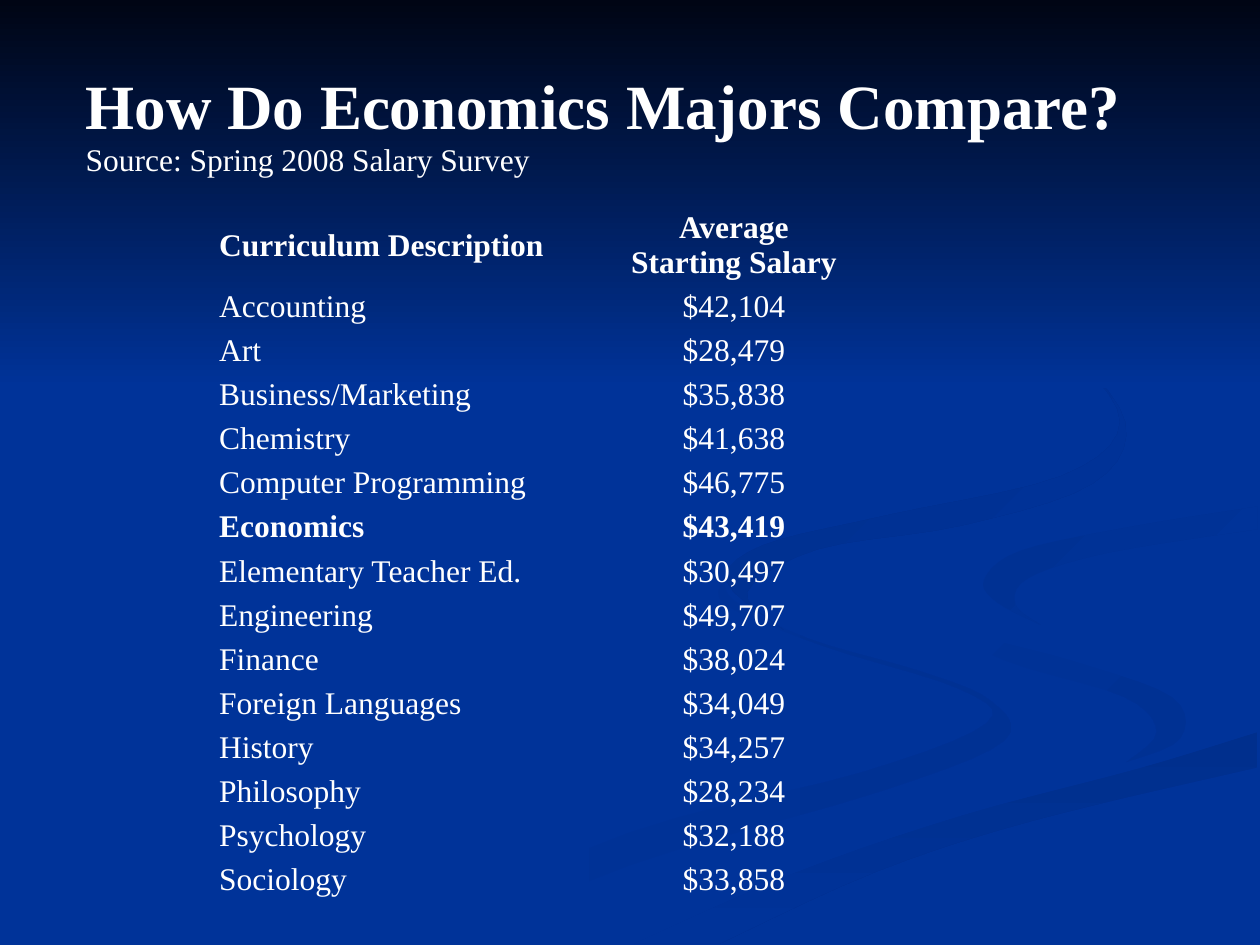
from dataclasses import dataclass
from typing import NamedTuple

from pptx import Presentation
from pptx.dml.color import RGBColor as Rgb
from pptx.enum.shapes import MSO_SHAPE as Shape
from pptx.enum.text import MSO_ANCHOR as Anchor, PP_ALIGN as Align
from pptx.util import Inches, Pt

Edge = list[tuple[float, float]]


@dataclass(frozen=True)
class Theme:
    font: str = "Times New Roman"
    background: str = "003399"
    night: str = "000514"
    shade: str = "003193"
    deep_shade: str = "002F8D"
    text: str = "FFFFFF"
    title_size: int = 36
    body_size: int = 18
    plain_table: str = "{2D5ABB26-0587-4C30-8999-92F81FD0307C}"


THEME = Theme()


class Ribbon(NamedTuple):
    edges: list[Edge]
    start_color: str
    end_color: str
    angle: int


class Salary(NamedTuple):
    curriculum: str
    average: str
    bold: bool = False


class Line(NamedTuple):
    text: str
    size: int
    bold: bool


CURL = [(7.24, 4.64), (7.58, 4.98), (8.5, 5.24), (9.3, 5.53), (9.37, 5.86), (8.94, 6.05)]
STREAM = [(9.98, 5.81), (9.03, 6.1), (7.64, 6.47), (6.3, 6.93), (5.03, 7.49)]
HOOK = [(8.26, 4.96), (7.91, 4.78), (7.81, 4.6), (8.1, 4.37), (8.98, 4.18), (9.98, 4.02)]

RIBBONS = [
    Ribbon([
        [(5.75, 4.59), (5.83, 4.77), (6.42, 5.07), (7.31, 5.33), (7.86, 5.56),
         (7.97, 5.88), (6.99, 6.28), (4.99, 6.87), (3.61, 7.49)],
        [(3, 7.49), (4.99, 6.61), (6.84, 6.13), (7.83, 5.74), (7.62, 5.47),
         (6.54, 5.13), (5.76, 4.8), (5.75, 4.59)],
    ], THEME.background, THEME.shade, 0),
    Ribbon([
        CURL,
        [(8.94, 6.05), (9.18, 5.81), (8.92, 5.53), (7.97, 5.24), (7.33, 4.88), (7.24, 4.64)],
    ], THEME.background, THEME.shade, 45),
    Ribbon([
        STREAM,
        [(5.71, 7.49), (6.95, 6.92), (8.21, 6.51), (9.98, 6.09)],
    ], THEME.deep_shade, THEME.background, 90),
    Ribbon([
        [(9.98, 3.87), (8.3, 4.15), (7.42, 4.39), *CURL, (8.12, 6.25), (6.63, 6.68), (4.77, 7.49)],
        STREAM[::-1],
        [(9.98, 5.38), (9.04, 5.19), *HOOK],
    ], THEME.background, THEME.background, 0),
    Ribbon([
        HOOK,
        [(9.98, 4.2), (8.78, 4.39), (8.16, 4.59), (8.06, 4.8), (8.26, 4.96)],
    ], THEME.shade, THEME.background, 45),
    Ribbon([
        [(7.62, 2.33), (8.43, 2.75), (8.93, 3.35), (8.67, 3.84), (7.64, 4.17),
         (6.49, 4.36), (5.93, 4.7), (6.22, 5)],
        [(6.22, 5), (5.77, 4.62), (6.05, 4.33), (7.04, 4.09), (8.42, 3.78),
         (8.89, 3.35), (8.46, 2.79), (7.62, 2.33)],
    ], THEME.deep_shade, THEME.background, 45),
]

SALARIES = [
    Salary("Curriculum Description", "Average\nStarting Salary", True),
    Salary("Accounting", "$42,104"),
    Salary("Art", "$28,479"),
    Salary("Business/Marketing", "$35,838"),
    Salary("Chemistry", "$41,638"),
    Salary("Computer Programming", "$46,775"),
    Salary("Economics", "$43,419", True),
    Salary("Elementary Teacher Ed.", "$30,497"),
    Salary("Engineering", "$49,707"),
    Salary("Finance", "$38,024"),
    Salary("Foreign Languages", "$34,049"),
    Salary("History", "$34,257"),
    Salary("Philosophy", "$28,234"),
    Salary("Psychology", "$32,188"),
    Salary("Sociology", "$33,858"),
]


def smooth(edge: Edge, steps: int = 5) -> Edge:
    padded = [edge[0], *edge, edge[-1]]
    curve = []
    for before, start, end, after in zip(padded, padded[1:], padded[2:], padded[3:]):
        for step in range(steps):
            t = step / steps
            curve.append(tuple(
                b + t * (c - a + t * (2 * a - 5 * b + 4 * c - d + t * (3 * b - a - 3 * c + d))) / 2
                for a, b, c, d in zip(before, start, end, after)))
    return [*curve, edge[-1]]


def fill_gradient(band, start_color: str, end_color: str, angle: int) -> None:
    band.shadow.inherit = False
    band.line.fill.background()
    band.fill.gradient()
    band.fill.gradient_angle = -angle % 360
    for stop, color in zip(band.fill.gradient_stops, (start_color, end_color)):
        stop.color.rgb = Rgb.from_string(color)


def draw_ribbon(slide, ribbon: Ribbon) -> None:
    start, *rest = [(Inches(x), Inches(y)) for edge in ribbon.edges for x, y in smooth(edge)]
    builder = slide.shapes.build_freeform(*start)
    builder.add_line_segments(rest, close=True)
    fill_gradient(builder.convert_to_shape(), ribbon.start_color, ribbon.end_color, ribbon.angle)


def draw_sky(slide) -> None:
    sky = slide.shapes.add_shape(Shape.RECTANGLE, 0, 0, Inches(10), Inches(3.08))
    fill_gradient(sky, THEME.night, THEME.background, 90)


def add_plain_table(slide, left: float, top: float, widths: list[float], heights: list[float]):
    frame = slide.shapes.add_table(
        len(heights), len(widths), Inches(left), Inches(top),
        Inches(sum(widths)), Inches(sum(heights)))
    table = frame.table
    table.first_row = table.horz_banding = False
    table._tbl.tblPr.find("{*}tableStyleId").text = THEME.plain_table
    for column, width in zip(table.columns, widths):
        column.width = Inches(width)
    for row, height in zip(table.rows, heights):
        row.height = Inches(height)
    return table


def write_cell(cell, lines: list[Line], align: Align = Align.LEFT) -> None:
    cell.fill.background()
    cell.vertical_anchor = Anchor.MIDDLE
    paragraph = cell.text_frame.paragraphs[0]
    paragraph.alignment = align
    for index, line in enumerate(lines):
        if index:
            paragraph.add_line_break()
        run = paragraph.add_run()
        run.text = line.text
        run.font.name = THEME.font
        run.font.size = Pt(line.size)
        run.font.bold = line.bold
        run.font.color.rgb = Rgb.from_string(THEME.text)


def draw_title(slide) -> None:
    title = add_plain_table(slide, 0.58, 0.5, [9.25], [1])
    write_cell(title.cell(0, 0), [
        Line("How Do Economics Majors Compare?", THEME.title_size, True),
        Line("Source: Spring 2008 Salary Survey", THEME.body_size, False),
    ])


def draw_salaries(slide) -> None:
    heights = [0.62] + [0.35] * (len(SALARIES) - 1)
    table = add_plain_table(slide, 1.67, 1.64, [2.77, 2.77], heights)
    for row, salary in enumerate(SALARIES):
        for column, (text, align) in enumerate(
                [(salary.curriculum, Align.LEFT), (salary.average, Align.CENTER)]):
            cell = table.cell(row, column)
            cell.margin_left = cell.margin_right = Inches(0.07)
            cell.margin_top = cell.margin_bottom = Inches(0.03)
            lines = [Line(part, THEME.body_size, salary.bold) for part in text.split("\n")]
            write_cell(cell, lines, align)


def main() -> None:
    deck = Presentation()
    deck.slide_width, deck.slide_height = Inches(10), Inches(7.5)
    slide = deck.slides.add_slide(deck.slide_layouts[6])
    slide.background.fill.solid()
    slide.background.fill.fore_color.rgb = Rgb.from_string(THEME.background)
    for ribbon in RIBBONS:
        draw_ribbon(slide, ribbon)
    draw_sky(slide)
    draw_title(slide)
    draw_salaries(slide)
    deck.save("out.pptx")


if __name__ == "__main__":
    main()
